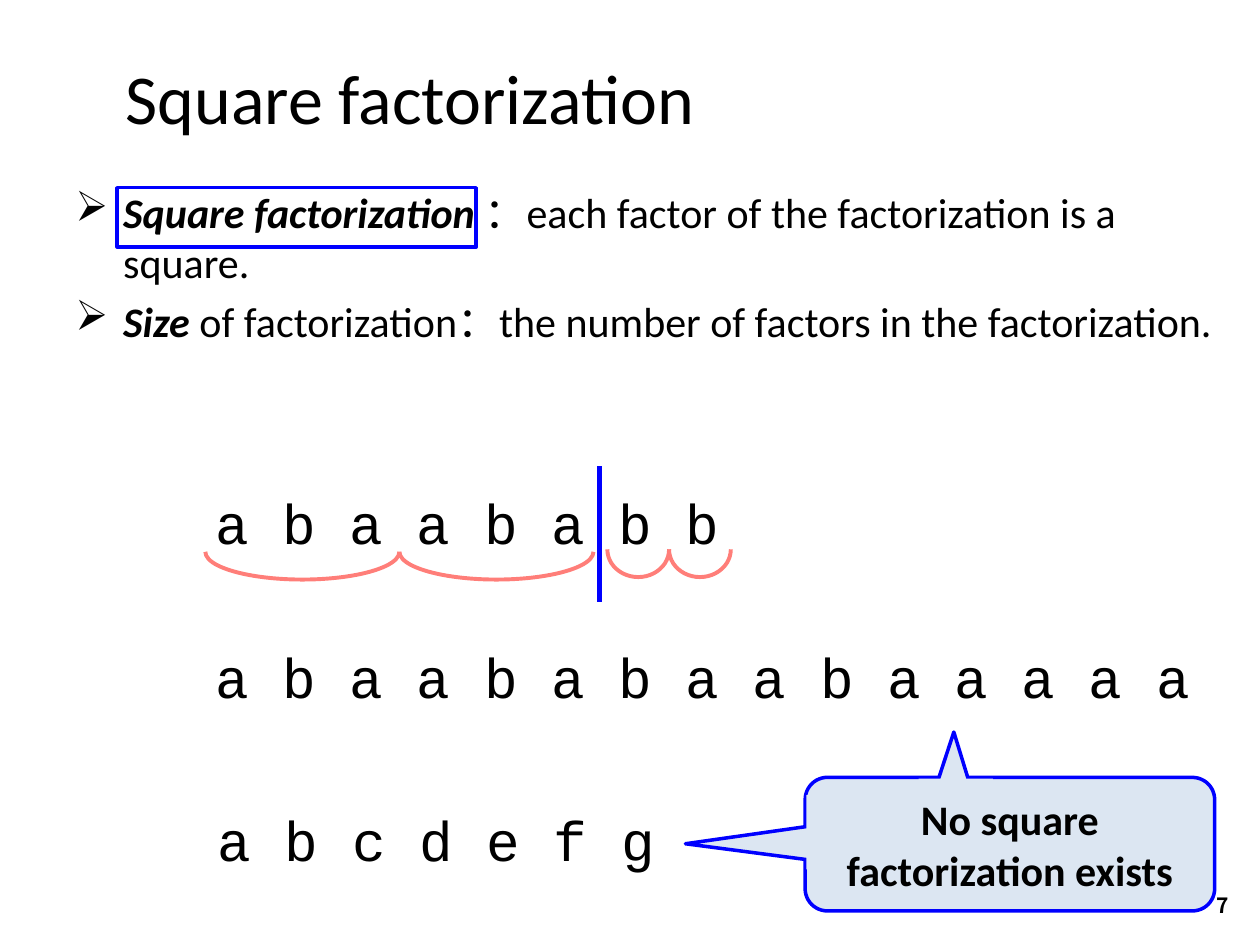
from lxml import etree
from pptx import Presentation
from pptx import util as u
from pptx.dml.color import RGBColor
from pptx.enum import shapes, text
from pptx.oxml.ns import qn

BLACK = RGBColor(0x00, 0x00, 0x00)
BLUE = RGBColor(0x00, 0x00, 0xFF)
PALE = RGBColor(0xDC, 0xE6, 0xF2)
CORAL = RGBColor(0xFF, 0x7E, 0x79)
SANS, MONO, CJK = "Calibri", "Courier New", "Noto Sans CJK JP"

TITLE = "Square factorization"
# (defined term, rest of the sentence)
DEFINITIONS = [
    ("Square factorization ", "：each factor of the factorization is a square."),
    ("Size", " of factorization：the number of factors in the factorization."),
]
# (string, left, top, width)
STRINGS = [
    ("a b a a b a b b", 1.61, 3.83, 5.31),
    ("a b c d e f g", 1.63, 6.34, 5.39),
    ("a b a a b a b a a b a a a a a", 1.61, 5.05, 8.75),
]
# (left, top, width of one arc, number of arcs)
FACTOR_ARCS = [(1.63, 4.16, 1.54, 2), (4.82, 4.14, 0.49, 2)]
ARC_HEIGHT = 0.44
CALLOUT = "No square factorization exists"
# (left, top, width, height, rotation, apex position)
POINTERS = [(7.4, 5.81, 0.33, 0.52, 0, 0.517), (5.84, 6.14, 0.3, 1.1, 270, 0.48)]
# Borderless patches that join the pointers to the callout
SEAMS = [(6.4, 6.31, 0.19, 0.59), (7.29, 6.18, 0.59, 0.19)]
PAGE = "7"

prs = Presentation()
prs.slide_width, prs.slide_height = u.Inches(10), u.Inches(7.5)
slide = prs.slides.add_slide(prs.slide_layouts[6])


def inches(*values):
    return [u.Inches(v) for v in values]


def style(run, size, font=SANS, bold=False, italic=False):
    f = run.font
    f.size, f.name, f.bold, f.italic = u.Pt(size), font, bold, italic
    f.color.rgb = BLACK
    east_asian = etree.SubElement(run._r.get_or_add_rPr(), qn("a:ea"))
    east_asian.set("typeface", CJK)


def add_text(box, content, size, font=SANS, bold=False,
             align=text.PP_ALIGN.LEFT, anchor=text.MSO_ANCHOR.TOP):
    tf = slide.shapes.add_textbox(*inches(*box)).text_frame
    tf.word_wrap, tf.vertical_anchor = True, anchor
    p = tf.paragraphs[0]
    p.text, p.alignment = content, align
    style(p.runs[0], size, font, bold)


def add_shape(kind, box, fill=None, line=None, width=2):
    sp = slide.shapes.add_shape(kind, *inches(*box))
    sp.shadow.inherit = False
    if fill is None:
        sp.fill.background()
    else:
        sp.fill.solid()
        sp.fill.fore_color.rgb = fill
    if line is None:
        sp.line.fill.background()
    else:
        sp.line.color.rgb, sp.line.width = line, u.Pt(width)
    return sp


def add_definitions():
    tf = slide.shapes.add_textbox(*inches(0.5, 1.43, 9.5, 1.71)).text_frame
    tf.word_wrap = True
    for i, (term, rest) in enumerate(DEFINITIONS):
        p = tf.add_paragraph() if i else tf.paragraphs[0]
        if i:
            p.space_before = u.Pt(4.8)
        pPr = p._p.get_or_add_pPr()
        pPr.set("marL", str(u.Inches(0.38)))
        pPr.set("indent", str(-u.Inches(0.38)))
        etree.SubElement(pPr, qn("a:buChar")).set("char", "➢")
        for content, strong in ((term, True), (rest, False)):
            r = p.add_run()
            r.text = content
            style(r, 24, bold=strong, italic=strong)


def add_factor_arcs():
    for left, top, width, count in FACTOR_ARCS:
        for i in range(count):
            arc = add_shape(shapes.MSO_SHAPE.ARC,
                            (left + i * width, top, width, ARC_HEIGHT),
                            line=CORAL, width=2.25)
            # lower half: 0 to 180 degrees in 60000ths, scaled by 100000
            arc.adjustments[0], arc.adjustments[1] = 0, 108


def add_divider():
    line = slide.shapes.add_connector(
        shapes.MSO_CONNECTOR.STRAIGHT, *inches(4.76, 3.7, 4.76, 4.78))
    line.line.color.rgb, line.line.width = BLUE, u.Pt(3)
    etree.SubElement(line._element.spPr, qn("a:effectLst"))


def add_callout():
    sp = add_shape(shapes.MSO_SHAPE.ROUNDED_RECTANGLE,
                   (6.39, 6.17, 3.25, 1.06), PALE, BLUE)
    tf = sp.text_frame
    tf.word_wrap, tf.vertical_anchor = True, text.MSO_ANCHOR.MIDDLE
    p = tf.paragraphs[0]
    p.text, p.alignment = CALLOUT, text.PP_ALIGN.CENTER
    style(p.runs[0], 24, bold=True)
    for *box, rotation, apex in POINTERS:
        pointer = add_shape(shapes.MSO_SHAPE.ISOSCELES_TRIANGLE, box, PALE, BLUE)
        pointer.rotation, pointer.adjustments[0] = rotation, apex
    for box in SEAMS:
        add_shape(shapes.MSO_SHAPE.RECTANGLE, box, PALE)


add_definitions()
add_text((9.17, 6.98, 0.68, 0.4), PAGE, 12, CJK, True,
         text.PP_ALIGN.RIGHT, text.MSO_ANCHOR.MIDDLE)
add_text((0.9, 0.3, 8.6, 0.93), TITLE, 40, anchor=text.MSO_ANCHOR.MIDDLE)
add_shape(shapes.MSO_SHAPE.RECTANGLE, (0.93, 1.49, 2.85, 0.47), line=BLUE)
add_factor_arcs()
add_divider()
add_callout()
for string, left, top, width in STRINGS:
    add_text((left, top, width, 0.64), string, 32, MONO)

prs.save("out.pptx")
